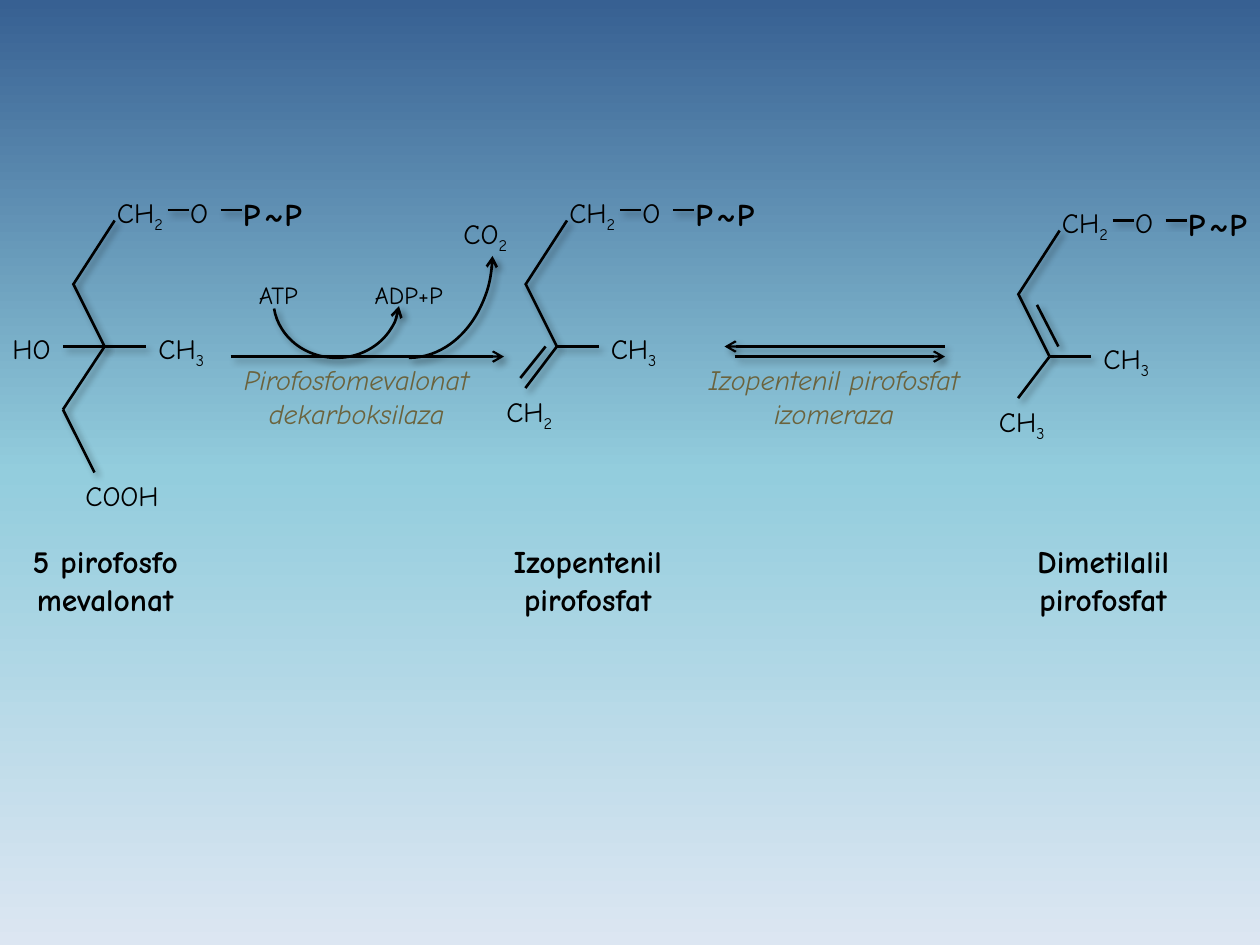
from copy import deepcopy

from lxml import etree
from pptx import Presentation
from pptx.dml.color import RGBColor
from pptx.enum import shapes, text
from pptx.oxml.ns import qn
from pptx.util import Inches, Pt

FONT = "Comic Neue"
BLACK, ENZYME = "000000", "6B633D"


def rgb(value):
    return RGBColor.from_string(value)


def paint_background(slide, colors):
    fill = slide.background.fill
    fill.gradient()
    fill.gradient_angle = 270
    stop_list = slide.element.find(".//" + qn("a:gsLst"))
    stop_list.append(deepcopy(stop_list[-1]))
    for index, (stop, color) in enumerate(zip(fill.gradient_stops, colors)):
        stop.color.rgb = rgb(color)
        stop.position = index / (len(colors) - 1)


def style_stroke(shape, width, arrow_end=None):
    """Black line with a soft shadow; arrow_end is headEnd or tailEnd."""
    shape.line.color.rgb = rgb(BLACK)
    shape.line.width = Pt(width)
    properties = shape._element.spPr
    if arrow_end:
        line = properties.find(qn("a:ln"))
        etree.SubElement(line, qn("a:" + arrow_end), type="arrow")
    effects = etree.SubElement(properties, qn("a:effectLst"))
    shadow = etree.SubElement(effects, qn("a:outerShdw"), blurRad=str(Pt(4)),
                              dist=str(Pt(3)), dir=str(45 * 60000), rotWithShape="0")
    color = etree.SubElement(shadow, qn("a:srgbClr"), val=BLACK)
    etree.SubElement(color, qn("a:alpha"), val="40000")


def add_line(slide, start, end, width=1.25, arrow_end=None):
    connector = slide.shapes.add_connector(
        shapes.MSO_CONNECTOR.STRAIGHT, *(Inches(v) for v in (*start, *end)))
    style_stroke(connector, width, arrow_end)


def add_arc(slide, box, adjustments):
    arc = slide.shapes.add_shape(shapes.MSO_SHAPE.ARC, *(Inches(v) for v in box))
    arc.adjustments[0], arc.adjustments[1] = adjustments
    arc.fill.background()
    style_stroke(arc, 1.5, "headEnd")


def add_text(slide, box, lines, size=16, color=BLACK, bold=False, italic=False,
             centered=True, wrap=True, subscript=None):
    text_box = slide.shapes.add_textbox(*(Inches(v) for v in box))
    frame = text_box.text_frame
    frame.word_wrap = wrap
    if not wrap:
        frame.auto_size = text.MSO_AUTO_SIZE.SHAPE_TO_FIT_TEXT
    frame.text = lines
    if subscript:
        run = frame.paragraphs[0].add_run()
        run.text = subscript
        run.font._element.set("baseline", "-25000")
    for paragraph in frame.paragraphs:
        if centered:
            paragraph.alignment = text.PP_ALIGN.CENTER
        for run in paragraph.runs:
            run.font.name = FONT
            run.font.size = Pt(size)
            run.font.color.rgb = rgb(color)
            run.font.bold = bold
            run.font.italic = italic


def add_group(slide, x, y, symbol, subscript=None, width=0.67):
    """Chemical group such as CH₃, with its box at x, y."""
    add_text(slide, (x, y, width, 0.37), symbol, centered=False,
             wrap=bool(subscript), subscript=subscript)


def add_skeleton(slide, x, y):
    """Parts shared by all molecules; x, y is the branching carbon."""
    # Chain up to the phosphate and bond to the methyl group
    add_line(slide, (x, y), (x - 0.25, y - 0.5), 1.5)
    add_line(slide, (x - 0.25, y - 0.49), (x + 0.08, y - 1), 1.5)
    add_line(slide, (x, y), (x + 0.33, y))
    add_group(slide, x + 0.33, y - 0.17, "CH", "3")
    # CH2 - O - P~P
    top = y - 1.25
    add_group(slide, x, top, "CH", "2")
    add_group(slide, x + 0.58, top, "O", width=0.38)
    for bond_x in (x + 0.5, x + 0.92):
        add_line(slide, (bond_x, y - 1.08), (bond_x + 0.17, y - 1.08))
    for offset, symbol, width in ((1, "P", 0.34), (1.17, "~", 0.36), (1.33, "P", 0.34)):
        add_text(slide, (x + offset, top, width, 0.4), symbol, 18, bold=True,
                 centered=False, wrap=False)


def add_name(slide, x, name):
    add_text(slide, (x, 4.25, 1.67, 0.75), name, 18, bold=True)


def add_mevalonate(slide, x, y):
    add_skeleton(slide, x, y)
    add_line(slide, (x - 0.33, y), (x, y))
    add_group(slide, x - 0.83, y - 0.17, "HO", width=0.55)
    add_line(slide, (x, y), (x - 0.33, y + 0.5), 1.5)
    add_line(slide, (x - 0.33, y + 0.5), (x - 0.08, y + 1), 1.5)
    add_group(slide, x - 0.25, y + 1, "COOH", width=0.87)
    add_name(slide, x - 0.83, "5 pirofosfo mevalonat")


def add_isopentenyl(slide, x, y):
    add_skeleton(slide, x, y)
    add_line(slide, (x, y), (x - 0.25, y + 0.33), 1.5)
    add_line(slide, (x - 0.09, y), (x - 0.29, y + 0.25), 1.5)
    add_group(slide, x - 0.5, y + 0.33, "CH", "2")
    add_name(slide, x - 0.59, "Izopentenil\npirofosfat")


def add_dimethylallyl(slide, x, y):
    add_skeleton(slide, x, y)
    add_line(slide, (x, y), (x - 0.25, y + 0.33), 1.5)
    add_line(slide, (x - 0.1, y - 0.41), (x + 0.07, y - 0.08), 1.5)
    add_group(slide, x - 0.5, y + 0.33, "CH", "3")
    add_name(slide, x - 0.41, "Dimetilalil\npirofosfat")


def add_enzyme(slide, x, y, width, name):
    add_text(slide, (x, y, width, 0.67), name, color=ENZYME, italic=True)


def add_decarboxylation(slide, x, y):
    """Reaction arrow starting at x, y, with its cofactors above."""
    add_line(slide, (x, y), (x + 2.17, y), arrow_end="tailEnd")
    add_enzyme(slide, x - 0.25, y, 2.5, "Pirofosfomevalonat\ndekarboksilaza")
    add_arc(slide, (x + 0.34, y - 0.91, 1, 0.92), (3.422, 103.237))
    add_arc(slide, (x + 0.75, y - 1.66, 1.33, 1.67), (1.345, 53.974))
    add_text(slide, (x + 0.09, y - 0.66, 0.58, 0.33), "ATP", 14)
    add_text(slide, (x + 1, y - 0.66, 0.83, 0.33), "ADP+P", 14)
    add_group(slide, x + 1.75, y - 1.16, "CO", "2")


def add_isomerization(slide, x, y):
    """Pair of opposite arrows; the lower one starts at x, y."""
    add_line(slide, (x, y), (x + 1.67, y), arrow_end="tailEnd")
    add_line(slide, (x + 1.67, y - 0.08), (x - 0.08, y - 0.08), arrow_end="tailEnd")
    add_enzyme(slide, x - 0.5, y, 2.58, "Izopentenil pirofosfat\nizomeraza")


def main():
    presentation = Presentation()
    presentation.slide_width, presentation.slide_height = Inches(10), Inches(7.5)
    slide = presentation.slides.add_slide(presentation.slide_layouts[6])
    paint_background(slide, ("376092", "93CDDD", "DCE6F2"))
    # Molecules from left to right, with the reactions between them
    add_mevalonate(slide, 0.83, 2.75)
    add_decarboxylation(slide, 1.83, 2.83)
    add_isopentenyl(slide, 4.42, 2.75)
    add_isomerization(slide, 5.83, 2.83)
    add_dimethylallyl(slide, 8.33, 2.83)
    presentation.save("out.pptx")


if __name__ == "__main__":
    main()
